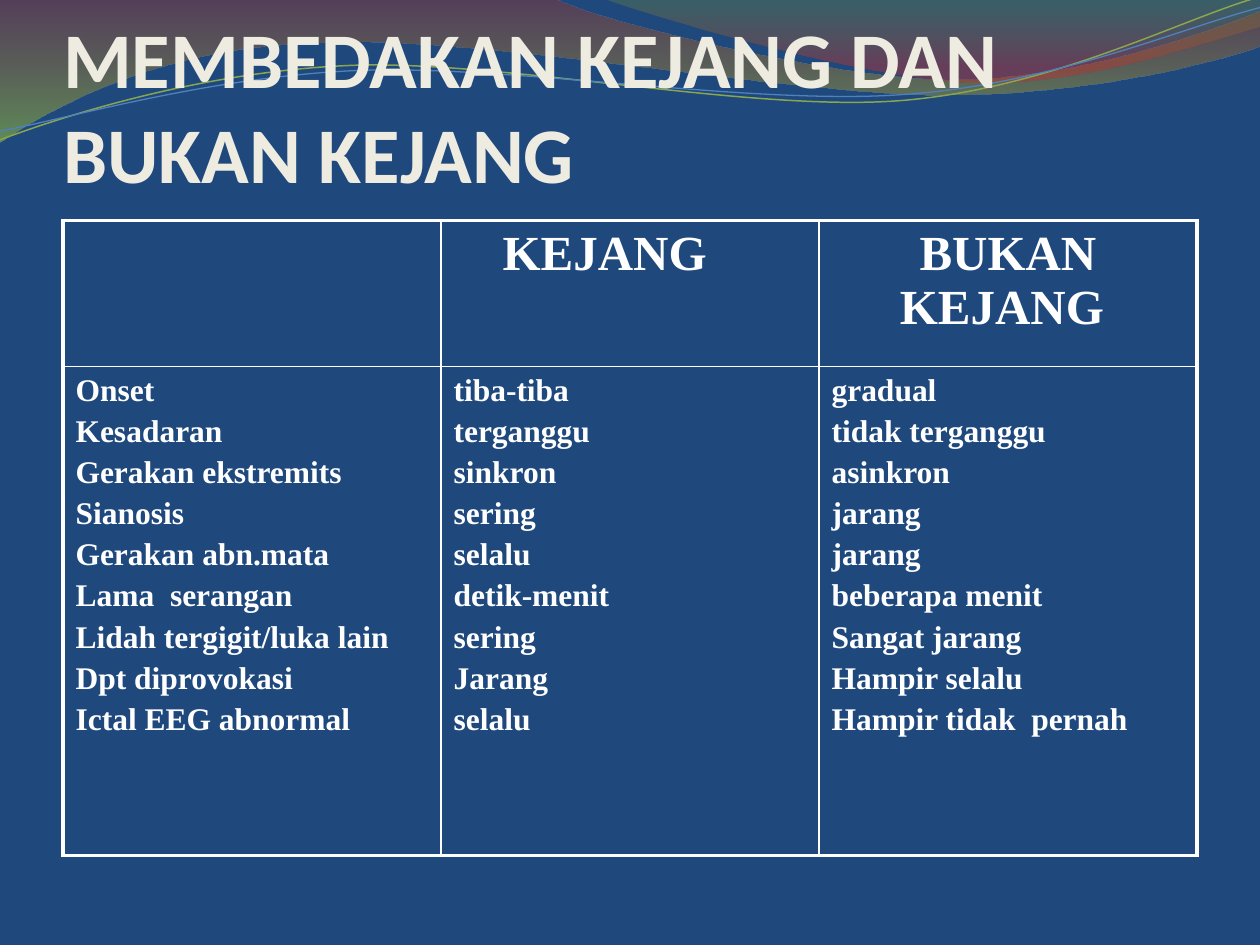
from dataclasses import dataclass
from math import cos, radians, sin

from lxml.etree import SubElement
from pptx import Presentation
from pptx.dml.color import RGBColor
from pptx.enum.text import MSO_ANCHOR, MSO_AUTO_SIZE, PP_ALIGN
from pptx.oxml import parse_xml
from pptx.oxml.ns import nsdecls, qn
from pptx.util import Inches, Pt


@dataclass(frozen=True)
class Theme:
    background: str = "1F497D"
    title: str = "EEECE1"
    text: str = "FFFFFF"
    green_line: str = "89A54F"
    blue_line: str = "4F81BD"
    # Gradient stops: position %, colour, opacity %
    left_wave: tuple = ((0, "973330", 45), (100, "95C238", 55))
    right_wave: tuple = ((0, "769537", 30), (80, "BE3330", 45))
    title_font: str = "Calibri"
    table_font: str = "Times New Roman"
    title_size: int = 45
    header_size: int = 28
    body_size: int = 18
    outer_border: float = 2.25
    inner_border: float = 1


THEME = Theme()

# Each outline starts at a point; one more point draws a line, three a Bézier curve
LEFT_WAVE = [
    [(0, 0)], [(4.4, -0.01)],
    [(4.76, 0.17), (6.64, 0.63), (7.58, 0.63)], [(8.53, 0.63), (9.58, 0.26), (10, 0.09)],
    [(10.01, 0.36)],
    [(9.83, 0.44), (8.7, 0.76), (7.46, 0.75)], [(6.22, 0.75), (3.82, 0.28), (2.57, 0.34)],
    [(1.29, 0.36), (0.46, 0.83), (-0.01, 1.13)],
]
RIGHT_WAVE = [
    [(4.79, -0.01)],
    [(5.09, 0.11), (6.82, 0.62), (7.69, 0.65)], [(8.56, 0.69), (9.61, 0.32), (10, 0.21)],
    [(10, 0)],
]
GREEN_CURVE = [
    [(0, 1.11)],
    [(0.48, 0.93), (1.58, 0.57), (2.77, 0.52)], [(3.95, 0.47), (5.93, 0.89), (7.13, 0.8)],
    [(8.33, 0.71), (9.38, 0.15), (9.98, -0.02)],
]
BLUE_CURVE = [
    [(0, 1.04)],
    [(0.47, 0.96), (1.64, 0.61), (2.83, 0.56)], [(4.03, 0.51), (5.97, 0.84), (7.17, 0.75)],
    [(8.36, 0.67), (9.41, 0.21), (10, 0.06)],
]
CURVE_TILT = -2.7
CURVE_CENTER = (4.99, 0.58)

HEADERS = ["", "KEJANG", "BUKAN KEJANG "]
COMPARISON = [
    ("Onset", "tiba-tiba", "gradual"),
    ("Kesadaran", "terganggu", "tidak terganggu"),
    ("Gerakan ekstremits", "sinkron", "asinkron"),
    ("Sianosis", "sering", "jarang"),
    ("Gerakan abn.mata", "selalu", "jarang"),
    ("Lama  serangan", "detik-menit", "beberapa menit"),
    ("Lidah tergigit/luka lain", "sering", "Sangat jarang"),
    ("Dpt diprovokasi", "Jarang", "Hampir selalu"),
    ("Ictal EEG abnormal", "selalu", "Hampir tidak  pernah"),
]


def rgb(color):
    return RGBColor.from_string(color)


def level(point):
    """Turn a point of a tilted curve back to the untilted position."""
    angle = radians(-CURVE_TILT)
    cx, cy = CURVE_CENTER
    x, y = point[0] - cx, point[1] - cy
    return cx + x * cos(angle) - y * sin(angle), cy + x * sin(angle) + y * cos(angle)


def add_outline(slide, outline, left, top, closed):
    """Join the segment ends by lines, then bend those that have control points."""
    segments = [[(left + Inches(x), top + Inches(y)) for x, y in segment]
                for segment in outline]
    builder = slide.shapes.build_freeform(*segments[0][0])
    builder.add_line_segments([segment[-1] for segment in segments[1:]], close=closed)
    shape = builder.convert_to_shape()
    shape.shadow.inherit = False
    lines = list(shape.element.spPr.iter(qn("a:lnTo")))
    for line, segment in zip(lines, segments[1:]):
        if len(segment) == 3:
            points = "".join(f'<a:pt x="{x - shape.left}" y="{y - shape.top}"/>'
                             for x, y in segment)
            bend = parse_xml(f'<a:cubicBezTo {nsdecls("a")}>{points}</a:cubicBezTo>')
            line.getparent().replace(line, bend)
    return shape


def add_wave(slide, outline, stops, left, top):
    wave = add_outline(slide, outline, left, top, closed=True)
    wave.line.fill.background()
    wave.fill.background()
    stop_xml = "".join(
        f'<a:gs pos="{pos * 1000}"><a:srgbClr val="{color}">'
        f'<a:alpha val="{opacity * 1000}"/></a:srgbClr></a:gs>'
        for pos, color, opacity in stops)
    gradient = parse_xml(
        f'<a:gradFill {nsdecls("a")}><a:gsLst>{stop_xml}</a:gsLst>'
        '<a:lin ang="5400000" scaled="0"/></a:gradFill>')
    properties = wave.element.spPr
    properties.replace(properties.find(qn("a:noFill")), gradient)


def add_curve(slide, outline, color, width, left, top):
    leveled = [[level(point) for point in segment] for segment in outline]
    curve = add_outline(slide, leveled, left, top, closed=False)
    curve.rotation = CURVE_TILT
    curve.fill.background()
    curve.line.color.rgb = rgb(color)
    curve.line.width = Pt(width)


def add_wave_band(slide, left, top):
    add_wave(slide, LEFT_WAVE, THEME.left_wave, left, top)
    add_wave(slide, RIGHT_WAVE, THEME.right_wave, left, top)
    add_curve(slide, GREEN_CURVE, THEME.green_line, 0.85, left, top)
    add_curve(slide, BLUE_CURVE, THEME.blue_line, 0.75, left, top)


def place_title(slide, left, top, width, height):
    title = slide.shapes.title
    title.left, title.top, title.width, title.height = left, top, width, height
    frame = title.text_frame
    frame.text = "MEMBEDAKAN KEJANG DAN BUKAN KEJANG"
    frame.word_wrap = True
    frame.auto_size = MSO_AUTO_SIZE.NONE
    frame.vertical_anchor = MSO_ANCHOR.BOTTOM
    frame.margin_left = frame.margin_right = frame.margin_bottom = 0
    frame.margin_top = Inches(0.05)
    heading = frame.paragraphs[0]
    heading.alignment = PP_ALIGN.LEFT
    style_font(heading.font, THEME.title_font, THEME.title_size, THEME.title)
    # Bring the title in front of the waves
    slide.shapes.element.append(title.element)


def style_font(font, name, size, color):
    font.name, font.size, font.bold = name, Pt(size), True
    font.color.rgb = rgb(color)


def set_borders(cell, outer_sides):
    """Cell borders come before the fill in the cell properties."""
    properties = cell._tc.get_or_add_tcPr()
    for index, side in enumerate("LRTB"):
        width = THEME.outer_border if side in outer_sides else THEME.inner_border
        border = SubElement(properties, qn(f"a:ln{side}"), w=str(Pt(width)))
        fill = SubElement(border, qn("a:solidFill"))
        SubElement(fill, qn("a:srgbClr"), val=THEME.text)
        properties.insert(index, border)


def fill_cell(cell, lines, size):
    cell.fill.background()
    cell.text = "\n".join(lines)
    for paragraph in cell.text_frame.paragraphs:
        paragraph.space_before = Pt(size * 0.2)
        style_font(paragraph.font, THEME.table_font, size, THEME.text)


def add_comparison(slide, left, top, width, height):
    table = slide.shapes.add_table(2, len(HEADERS), left, top, width, height).table
    table.first_row = table.horz_banding = False
    table.rows[0].height = Inches(1.16)
    table.rows[1].height = height - Inches(1.16)
    for column, (header, entries) in enumerate(zip(HEADERS, zip(*COMPARISON))):
        sides = {0: "L", len(HEADERS) - 1: "R"}.get(column, "")
        top_cell, body_cell = table.cell(0, column), table.cell(1, column)
        fill_cell(top_cell, [header], THEME.header_size)
        fill_cell(body_cell, entries, THEME.body_size)
        set_borders(top_cell, sides + "T")
        set_borders(body_cell, sides + "B")
    # The first heading is indented, the second is centred
    table.cell(0, 1).margin_left = Inches(0.49)
    table.cell(0, 2).text_frame.paragraphs[0].alignment = PP_ALIGN.CENTER


def main():
    deck = Presentation()
    deck.slide_width, deck.slide_height = Inches(10), Inches(7.5)
    slide = deck.slides.add_slide(deck.slide_layouts[5])
    slide.background.fill.solid()
    slide.background.fill.fore_color.rgb = rgb(THEME.background)
    add_wave_band(slide, Inches(0), Inches(0))
    place_title(slide, Inches(0.5), Inches(0.3), Inches(8.92), Inches(1.28))
    add_comparison(slide, Inches(0.5), Inches(1.75), Inches(9), Inches(5.04))
    deck.save("out.pptx")


if __name__ == "__main__":
    main()
